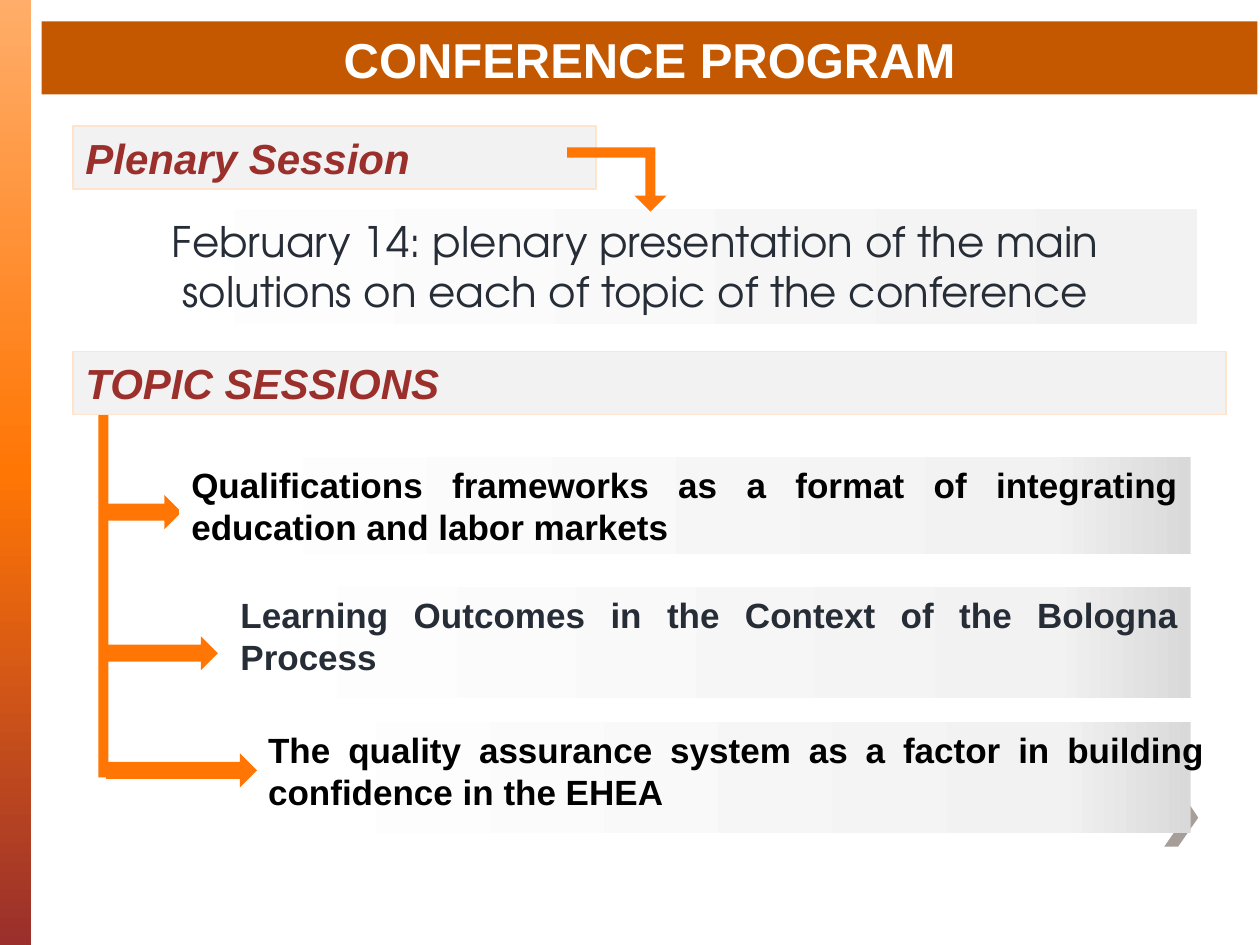
from lxml import etree
from pptx import Presentation
from pptx.dml.color import RGBColor
from pptx.enum.shapes import MSO_SHAPE
from pptx.enum.text import MSO_ANCHOR, PP_ALIGN
from pptx.oxml.ns import qn
from pptx.util import Inches, Pt

RECT, ARROW = MSO_SHAPE.RECTANGLE, MSO_SHAPE.RIGHT_ARROW
BENT_ARROW, CHEVRON = MSO_SHAPE.BENT_UP_ARROW, "A79D99"
LEFT, CENTER, JUSTIFY = PP_ALIGN.LEFT, PP_ALIGN.CENTER, PP_ALIGN.JUSTIFY

ORANGE, RED, DARK, BLACK = "FF7605", "9A2F2C", "262D36", "000000"
PALE, PEACH, BROWN, WHITE = "F2F2F2", "FFE4CD", "C35800", "FFFFFF"
SIDE_STOPS = [(0, "FFAD69"), (50, ORANGE), (100, RED)]
PLENARY_STOPS = [(0, PALE), (100, WHITE)]
TOPIC_STOPS = [(0, "D9D9D9"), (14, PALE), (100, WHITE)]

TITLE = "CONFERENCE PROGRAM"
HEADINGS = [
    ("Plenary Session", (0.58, 1, 4.15, 0.5)),
    ("TOPIC SESSIONS", (0.58, 2.79, 9.15, 0.5)),
]
PLENARY = "February 14: plenary presentation of the main solutions on each of topic of the conference"
PANEL_RIGHT = 9.45
# text, colour, text left and width, panel left, top and height, arrow left, top and width
TOPICS = [
    ("Qualifications frameworks as a format of integrating education and labor markets",
     BLACK, (1.42, 8.03), (1.42, 3.63, 0.77), (0.82, 3.93, 0.62)),
    ("Learning Outcomes in the Context of the Bologna Process",
     DARK, (1.81, 7.64), (1.73, 4.66, 0.88), (0.8, 5.05, 0.93)),
    ("The quality assurance system as a factor in building confidence in the EHEA",
     BLACK, (2.03, 7.63), (2.08, 5.73, 0.88), (0.84, 5.98, 1.2)),
]


def rgb(color):
    return RGBColor.from_string(color)


def paint(shape, color, line=None):
    shape.shadow.inherit = False
    shape.fill.solid()
    shape.fill.fore_color.rgb = rgb(color)
    if line:
        shape.line.color.rgb = rgb(line)
        shape.line.width = Pt(0.75)
    else:
        shape.line.fill.background()


def add_shape(page, kind, place, color, line=None):
    shape = page.shapes.add_shape(kind, *map(Inches, place))
    paint(shape, color, line)
    return shape


def add_gradient(page, place, stops, angle):
    """Add a rectangle whose gradient has any number of stops."""
    shape = add_shape(page, RECT, place, WHITE)
    shape.fill.gradient()
    shape.fill.gradient_angle = angle
    stop_list = shape._element.spPr.find(qn("a:gradFill")).find(qn("a:gsLst"))
    for old in list(stop_list):
        stop_list.remove(old)
    for percent, color in stops:
        stop = etree.SubElement(stop_list, qn("a:gs"), pos=str(percent * 1000))
        etree.SubElement(stop, qn("a:srgbClr"), val=color)
    return shape


def write(shape, text, size, color, align, font="Arial", bold=True, italic=False,
          anchor=MSO_ANCHOR.TOP):
    frame = shape.text_frame
    frame.text = text
    frame.word_wrap = True
    frame.vertical_anchor = anchor
    para = frame.paragraphs[0]
    para.alignment = align
    style = para.runs[0].font
    style.name, style.size, style.bold, style.italic = font, Pt(size), bold, italic
    style.color.rgb = rgb(color)


def add_title(page):
    title = page.shapes.title
    title.left, title.top, title.width, title.height = map(Inches, (0.33, 0.17, 9.65, 0.58))
    paint(title, BROWN)
    write(title, TITLE, 28, WHITE, CENTER, anchor=MSO_ANCHOR.BOTTOM)


def add_chevron(page):
    points = [(9.35, 6.25), (9.24, 6.25), (9.4, 6.49), (9.24, 6.72), (9.35, 6.72), (9.51, 6.49)]
    corners = [(Inches(x), Inches(y)) for x, y in points]
    builder = page.shapes.build_freeform(*corners[0])
    builder.add_line_segments(corners[1:], close=True)
    paint(builder.convert_to_shape(), CHEVRON)


def add_plenary(page):
    panel = add_gradient(page, (0.58, 1.66, 8.92, 0.91), PLENARY_STOPS, 180)
    write(panel, PLENARY, 24, DARK, CENTER, font="TeX Gyre Adventor", bold=False)
    arrow = add_shape(page, BENT_ARROW, (4.5, 1.17, 0.79, 0.51), ORANGE)
    arrow.adjustments[0] = 0.157
    arrow._element.spPr.find(qn("a:xfrm")).set("flipV", "1")


def add_topics(page):
    for text, color, (text_left, text_width), (left, top, height), arrow in TOPICS:
        add_shape(page, ARROW, (*arrow, 0.27), ORANGE)
        add_gradient(page, (left, top, PANEL_RIGHT - left, height), TOPIC_STOPS, 180)
        box = page.shapes.add_textbox(*map(Inches, (text_left, top, text_width, height)))
        write(box, text, 20, color, JUSTIFY)


def main():
    deck = Presentation()
    deck.slide_width, deck.slide_height = Inches(10), Inches(7.5)
    page = deck.slides.add_slide(deck.slide_layouts[5])
    add_gradient(page, (0, 0, 0.25, 7.5), SIDE_STOPS, 270)
    add_chevron(page)
    add_title(page)
    add_shape(page, RECT, (0.78, 3.2, 0.08, 2.97), ORANGE)
    for text, place in HEADINGS:
        heading = add_shape(page, RECT, place, PALE, PEACH)
        write(heading, text, 24, RED, LEFT, italic=True)
    add_plenary(page)
    add_topics(page)
    deck.save("out.pptx")


if __name__ == "__main__":
    main()
